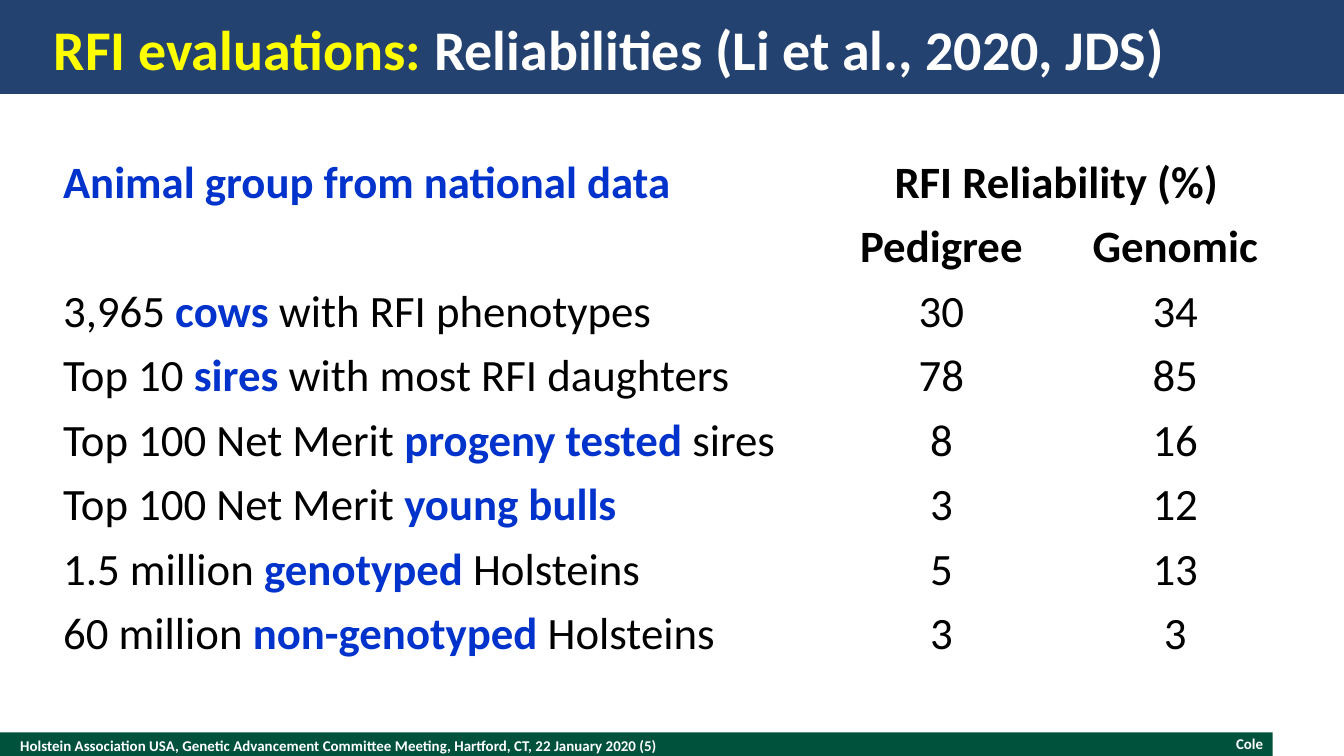
from typing import NamedTuple

from pptx import Presentation
from pptx.dml.color import RGBColor
from pptx.enum.shapes import MSO_SHAPE
from pptx.enum.text import MSO_ANCHOR, MSO_AUTO_SIZE, PP_ALIGN
from pptx.util import Inches, Pt

COLORS = {
    "navy": "244270",
    "green": "00523C",
    "yellow": "FFFF00",
    "white": "FFFFFF",
    "blue": "0033CC",
    "black": "000000",
}
FONT = "Calibri"


class Box(NamedTuple):
    left: float
    top: float
    width: float
    height: float


class Bar(NamedTuple):
    box: Box
    color: str


class FooterText(NamedTuple):
    box: Box
    text: str
    align: PP_ALIGN


class AnimalGroup(NamedTuple):
    before: str
    emphasis: str
    after: str
    pedigree: int
    genomic: int


BARS = [
    Bar(Box(0, 5.45, 9.47, 0.2), "green"),
    Bar(Box(0, 0, 10, 0.7), "navy"),
]
FOOTER = [
    FooterText(
        Box(0.15, 5.45, 6.5, 0.2),
        "Holstein Association USA, Genetic Advancement Committee Meeting, "
        "Hartford, CT, 22 January 2020 (5)",
        PP_ALIGN.LEFT,
    ),
    FooterText(Box(7.2, 5.47, 2.2, 0.13), "Cole", PP_ALIGN.RIGHT),
]
GROUPS = [
    AnimalGroup("3,965 ", "cows", " with RFI phenotypes", 30, 34),
    AnimalGroup("Top 10 ", "sires", " with most RFI daughters", 78, 85),
    AnimalGroup("Top 100 Net Merit ", "progeny tested ", "sires", 8, 16),
    AnimalGroup("Top 100 Net Merit ", "young bulls", "", 3, 12),
    AnimalGroup("1.5 million ", "genotyped", " Holsteins", 5, 13),
    AnimalGroup("60 million ", "non-genotyped ", "Holsteins", 3, 3),
]
COLUMN_WIDTHS = [5.72, 1.77, 1.71]
ROW_HEIGHT = 0.48


def rgb(name: str) -> RGBColor:
    return RGBColor.from_string(COLORS[name])


def inches(box: Box) -> list:
    return [Inches(length) for length in box]


def style(font, size: float, bold: bool, color: str) -> None:
    font.name, font.size, font.bold = FONT, Pt(size), bold
    font.color.rgb = rgb(color)


def clear_margins(frame) -> None:
    frame.margin_left = frame.margin_right = 0
    frame.margin_top = frame.margin_bottom = 0
    frame.vertical_anchor = MSO_ANCHOR.MIDDLE
    frame.word_wrap = True
    frame.auto_size = MSO_AUTO_SIZE.NONE


def add_bar(slide, bar: Bar) -> None:
    """Draw a band behind the title."""
    band = slide.shapes.add_shape(MSO_SHAPE.RECTANGLE, *inches(bar.box))
    band.shadow.inherit = False
    band.fill.solid()
    band.fill.fore_color.rgb = rgb(bar.color)
    band.line.fill.background()
    slide.shapes.title.element.addprevious(band.element)


def add_footer(slide, footer: FooterText) -> None:
    frame = slide.shapes.add_textbox(*inches(footer.box)).text_frame
    clear_margins(frame)
    paragraph = frame.paragraphs[0]
    paragraph.text = footer.text
    paragraph.alignment = footer.align
    style(paragraph.font, 8, True, "white")


def fill_title(title) -> None:
    title.left, title.top, title.width, title.height = inches(Box(0.4, 0.1, 9.2, 0.52))
    clear_margins(title.text_frame)
    paragraph = title.text_frame.paragraphs[0]
    paragraph.alignment = PP_ALIGN.LEFT
    for text, color in [
        ("RFI evaluations: ", "yellow"),
        ("Reliabilities (Li et al., 2020, JDS)", "white"),
    ]:
        run = paragraph.add_run()
        run.text = text
        style(run.font, 30, True, color)


def write_cell(cell, text: str, bold: bool = False, color: str = "black",
               align: PP_ALIGN = PP_ALIGN.CENTER) -> None:
    paragraph = cell.text_frame.paragraphs[0]
    paragraph.text = text
    paragraph.alignment = align
    style(paragraph.font, 24, bold, color)


def write_group(cell, group: AnimalGroup) -> None:
    paragraph = cell.text_frame.paragraphs[0]
    for text, bold, color in [
        (group.before, False, "black"),
        (group.emphasis, True, "blue"),
        (group.after, False, "black"),
    ]:
        if text:
            run = paragraph.add_run()
            run.text = text
            style(run.font, 24, bold, color)


def add_reliabilities(slide) -> None:
    row_count = len(GROUPS) + 2
    box = Box(0.4, 1.12, sum(COLUMN_WIDTHS), ROW_HEIGHT * row_count)
    table = slide.shapes.add_table(row_count, len(COLUMN_WIDTHS), *inches(box)).table
    table.first_row = table.horz_banding = False
    for column, width in zip(table.columns, COLUMN_WIDTHS):
        column.width = Inches(width)
    for cell in table.iter_cells():
        cell.fill.background()
        cell.margin_left = cell.margin_right = Inches(0.07)
        cell.margin_top, cell.margin_bottom = Inches(0.04), Inches(0.03)

    # Two header rows
    table.cell(0, 1).merge(table.cell(0, 2))
    write_cell(table.cell(0, 0), "Animal group from national data", True, "blue", PP_ALIGN.LEFT)
    write_cell(table.cell(0, 1), "RFI Reliability (%)", True)
    write_cell(table.cell(1, 1), "Pedigree", True)
    write_cell(table.cell(1, 2), "Genomic", True)

    # One row per animal group
    for row, group in enumerate(GROUPS, start=2):
        write_group(table.cell(row, 0), group)
        write_cell(table.cell(row, 1), str(group.pedigree))
        write_cell(table.cell(row, 2), str(group.genomic))


def main() -> None:
    # Widescreen slide, 16:9
    presentation = Presentation()
    presentation.slide_width = Inches(10)
    presentation.slide_height = Inches(10 * 9 / 16)
    slide = presentation.slides.add_slide(presentation.slide_layouts[5])

    # Bands, footer and title
    for bar in BARS:
        add_bar(slide, bar)
    for footer in FOOTER:
        add_footer(slide, footer)
    fill_title(slide.shapes.title)

    # Reliability table
    add_reliabilities(slide)
    presentation.save("out.pptx")


if __name__ == "__main__":
    main()
